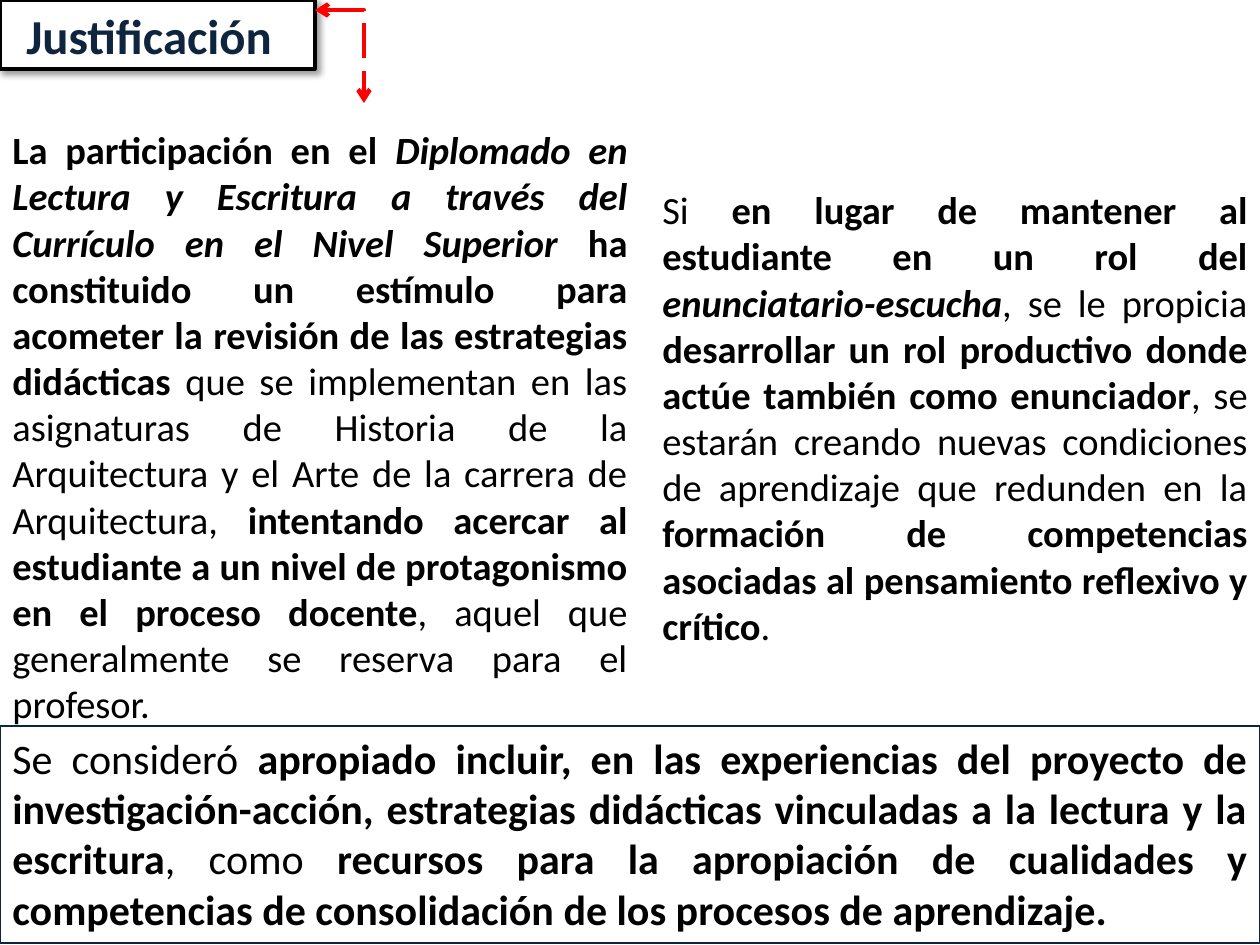
from lxml import etree
from pptx import Presentation, util as u
from pptx.dml.color import RGBColor
from pptx.enum import dml, shapes, text
from pptx.oxml.ns import qn

NAVY = RGBColor(0x0F, 0x24, 0x3E)
BLACK = RGBColor(0, 0, 0)
WHITE = RGBColor(255, 255, 255)
RED = RGBColor(255, 0, 0)
FONT = "Calibri"

# Runs are (text, style): "b" bold, "i" italic
PARTICIPATION = [
    ("La participación en el ", "b"),
    ("Diplomado en Lectura y Escritura a través del Currículo en el Nivel Superior", "bi"),
    (" ha constituido un estímulo para acometer la revisión de las estrategias didácticas ", "b"),
    ("que se implementan en las asignaturas de Historia de la Arquitectura y el Arte "
     "de la carrera de Arquitectura, ", ""),
    ("intentando acercar al estudiante a un nivel de protagonismo en el proceso docente", "b"),
    (", aquel que generalmente se reserva para el profesor.", ""),
]
STUDENT_ROLE = [
    ("Si ", ""),
    ("en lugar de mantener al estudiante en un rol del ", "b"),
    ("enunciatario-escucha", "bi"),
    (", se le propicia ", ""),
    ("desarrollar un rol productivo donde actúe también como enunciador", "b"),
    (", se estarán creando nuevas condiciones de aprendizaje que redunden en la ", ""),
    ("formación de competencias asociadas al pensamiento reflexivo y crítico", "b"),
    (".", ""),
]
CONCLUSION = [
    ("Se consideró ", ""),
    ("apropiado incluir, en las experiencias del proyecto de investigación-acción, "
     "estrategias didácticas vinculadas a la lectura y la escritura", "b"),
    (", como ", ""),
    ("recursos para la apropiación de cualidades y competencias de consolidación "
     "de los procesos de aprendizaje.", "b"),
]
# box in px, point size, outlined, runs
PASSAGES = [
    ((0, 120, 640, 619), 22, False, PARTICIPATION),
    ((650, 180, 610, 479), 22, False, STUDENT_ROLE),
    ((0, 726, 1260, 217), 24, True, CONCLUSION),
]
TITLE_BOX = (0, 0, 315, 69)
ARROW = (315, 10, 364, 103)


def px(values):
    return [round(v * 914400 / 126) for v in values]


def add_run(p, words, size, color, style="", font=FONT):
    r = p.add_run()
    r.text = words
    r.font.name, r.font.size = font, u.Pt(size)
    r.font.color.rgb = color
    r.font.bold, r.font.italic = "b" in style, "i" in style


def add_title(s):
    sp = s.shapes.add_shape(shapes.MSO_SHAPE.RECTANGLE, *px(TITLE_BOX))
    sp.fill.solid()
    sp.fill.fore_color.rgb = WHITE
    sp.line.color.rgb = BLACK
    sp.line.width = u.Pt(2)
    sp.shadow.inherit = False
    effects = sp._element.spPr.find(qn("a:effectLst"))
    shadow = etree.SubElement(effects, qn("a:outerShdw"), blurRad=str(u.Pt(4)),
                              dist=str(u.Pt(3)), dir="2700000", algn="tl", rotWithShape="0")
    color = etree.SubElement(shadow, qn("a:srgbClr"), val=str(BLACK))
    etree.SubElement(color, qn("a:alpha"), val="40000")
    tf = sp.text_frame
    tf.vertical_anchor = text.MSO_ANCHOR.MIDDLE
    p = tf.paragraphs[0]
    p.alignment = text.PP_ALIGN.LEFT
    add_run(p, " ", 28.8, NAVY, "b", "Arial")
    add_run(p, "Justificación", 27.9, NAVY, "b")


def add_arrow(s):
    """Dashed single-bend connector with an arrowhead at both ends."""
    cx = s.shapes.add_connector(shapes.MSO_CONNECTOR.ELBOW, *px(ARROW))
    cx.line.color.rgb = RED
    cx.line.width = u.Pt(2.5)
    cx.line.dash_style = dml.MSO_LINE.LONG_DASH
    spPr = cx._element.spPr
    spPr.find(qn("a:prstGeom")).set("prst", "bentConnector2")
    ln = spPr.find(qn("a:ln"))
    for end in ("a:headEnd", "a:tailEnd"):
        etree.SubElement(ln, qn(end), type="arrow")
    etree.SubElement(spPr, qn("a:effectLst"))


def add_passage(s, box, size, outlined, runs):
    if outlined:
        sp = s.shapes.add_shape(shapes.MSO_SHAPE.RECTANGLE, *px(box))
        sp.shadow.inherit = False
        sp.fill.background()
        sp.line.color.rgb = NAVY
        sp.line.width = u.Pt(1)
    else:
        sp = s.shapes.add_textbox(*px(box))
    tf = sp.text_frame
    tf.word_wrap = True
    tf.auto_size = text.MSO_AUTO_SIZE.SHAPE_TO_FIT_TEXT
    tf.vertical_anchor = text.MSO_ANCHOR.TOP
    p = tf.paragraphs[0]
    p.alignment = text.PP_ALIGN.JUSTIFY
    for words, style in runs:
        add_run(p, words, size, BLACK, style)


def main():
    prs = Presentation()
    prs.slide_width, prs.slide_height = px((1260, 945))
    s = prs.slides.add_slide(prs.slide_layouts[6])
    s.background.fill.solid()
    s.background.fill.fore_color.rgb = WHITE
    add_title(s)
    add_arrow(s)
    for passage in PASSAGES:
        add_passage(s, *passage)
    prs.save("out.pptx")


if __name__ == "__main__":
    main()
